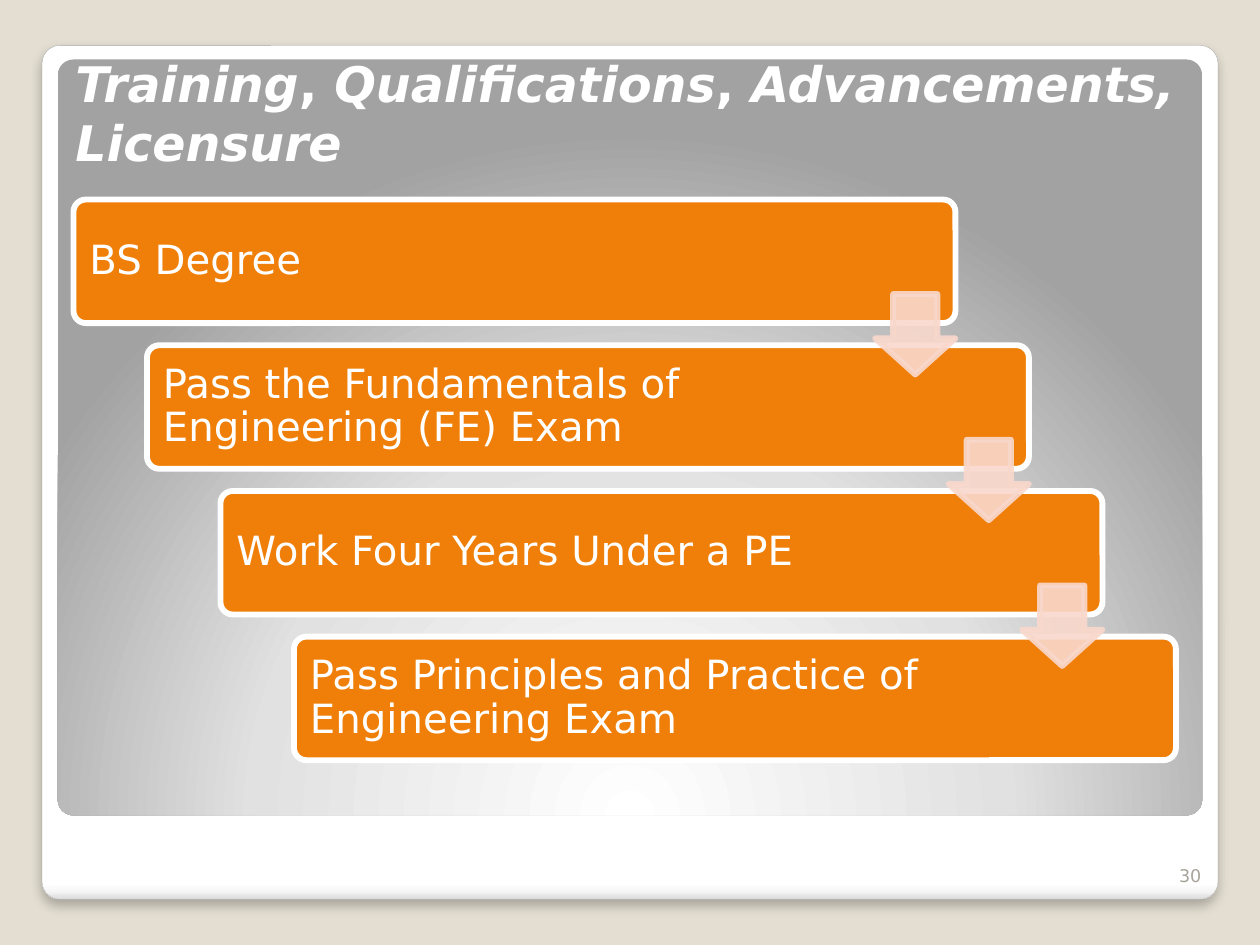
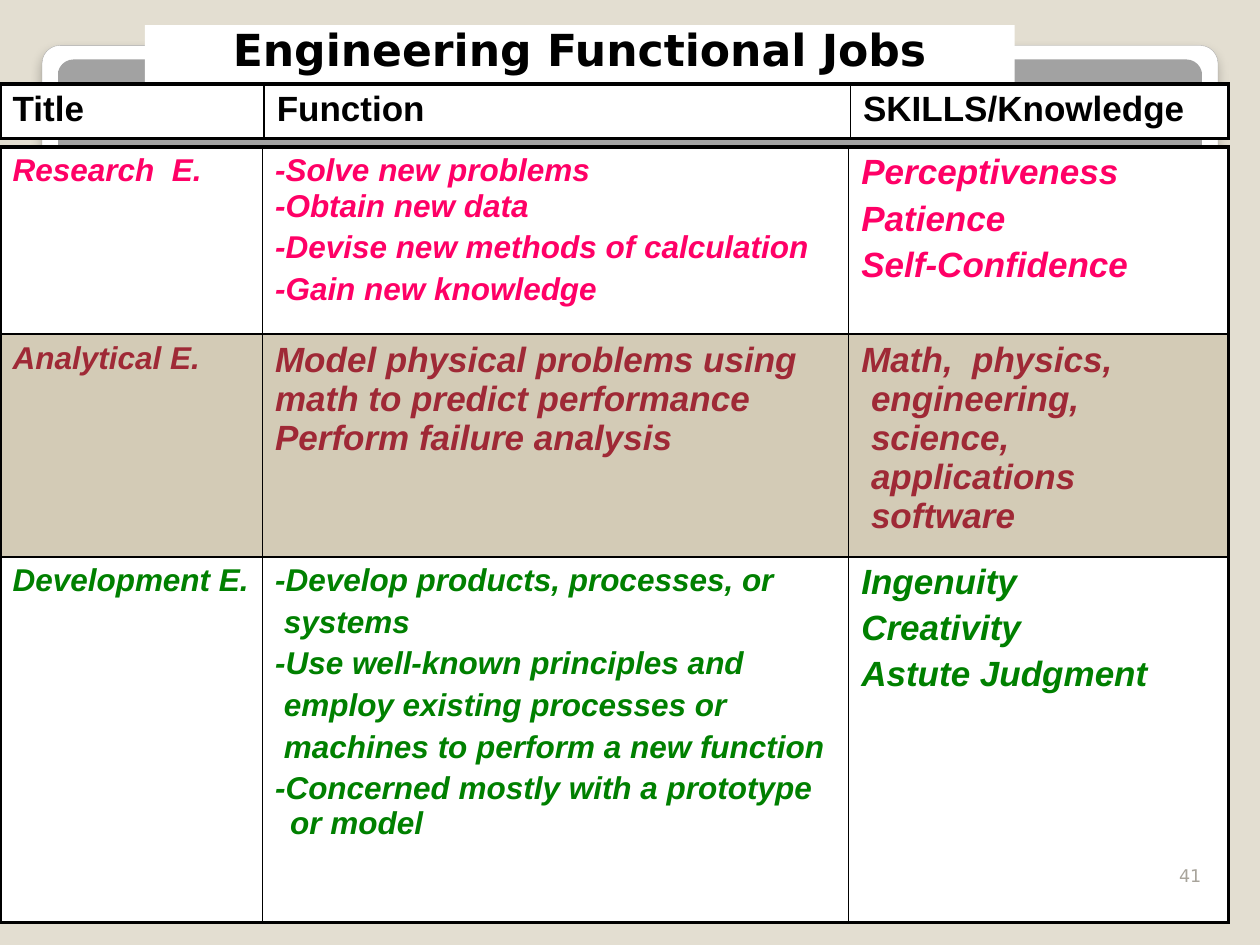
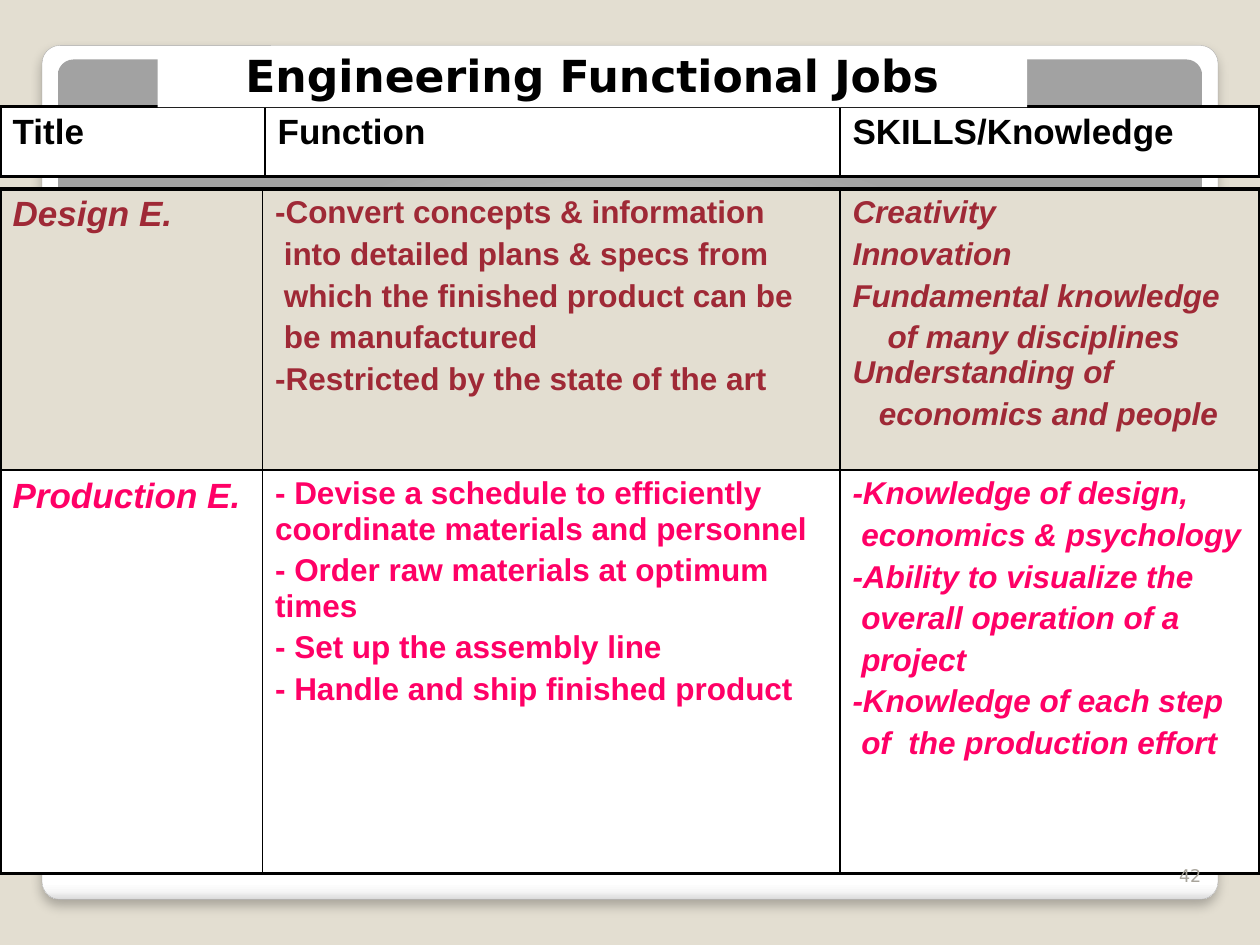
from collections import namedtuple

from lxml.etree import SubElement
from pptx import Presentation
from pptx.dml.color import RGBColor
from pptx.enum.shapes import MSO_SHAPE
from pptx.enum.text import MSO_ANCHOR, PP_ALIGN
from pptx.oxml import parse_xml
from pptx.oxml.ns import nsdecls, qn
from pptx.util import Pt

COLORS = {
    "background": "E3DED1", "white": "FFFFFF", "black": "000000",
    "frame": "A4A4A4", "number": "A8A49B", "step": "F07F09", "arrow": "F9D8CC",
    "pink": "FF0066", "maroon": "9F2936", "green": "008000", "tan": "D3CBB6",
}
TITLE_FONT = "DejaVu Sans"
TABLE_FONT = "Arial"
FRAME_STOPS = [(0, "FFFFFF"), (98, "FFFFFF"), (99, "F7F7F7"), (100, "DADADA")]
FRAME_SHADE = '<a:lin ang="5400000" scaled="0"/>'
PANEL_STOPS = [(0, "FFFFFF"), (55, "E1E1E1"), (100, "A2A2A2")]
PANEL_SHADE = ('<a:path path="circle"><a:fillToRect l="50000" t="175000" '
               'r="50000" b="-75000"/></a:path>')
STEPS = [
    "BS Degree",
    "Pass the Fundamentals of Engineering (FE) Exam",
    "Work Four Years Under a PE",
    "Pass Principles and Practice of Engineering Exam",
]
TITLE_PARTS = ["Training", ", ", "Qualifications", ", ", "Advancements, Licensure"]
HEADINGS = ["Title", "Function", "SKILLS/Knowledge"]

Box = namedtuple("Box", "left top width height")
Line = namedtuple("Line", "text left first", defaults=(0, 0))
Cell = namedtuple("Cell", "size italic lines")
Row = namedtuple("Row", "height fill color cells")

JOBS_RESEARCH = [
    Row(107, "white", "pink", [
        Cell(18, True, [Line("Research  E.")]),
        Cell(18, True, [Line("-Solve new problems\n-Obtain new data"),
                        Line("-Devise new methods of calculation"),
                        Line("-Gain new knowledge")]),
        Cell(20, True, [Line("Perceptiveness"), Line("Patience"),
                        Line("Self-Confidence")]),
    ]),
    Row(122, "tan", "maroon", [
        Cell(18, True, [Line("Analytical E.")]),
        Cell(20, True, [Line("Model physical problems using math to predict "
                             "performance Perform failure analysis")]),
        Cell(20, True, [Line("Math,  physics,\n engineering,\n science,"
                             "\n applications\n software")]),
    ]),
    Row(208.8, "white", "green", [
        Cell(18, True, [Line("Development E.")]),
        Cell(18, True, [Line("-Develop products, processes, or"),
                        Line(" systems"),
                        Line("-Use well-known principles and"),
                        Line(" employ existing processes or"),
                        Line(" machines to perform a new function"),
                        Line("-Concerned mostly with a prototype or model", 8.64, -8.64)]),
        Cell(20, True, [Line("Ingenuity"), Line("Creativity"),
                        Line("Astute Judgment")]),
    ]),
]
JOBS_DESIGN = [
    Row(160.6, "background", "maroon", [
        Cell(20, True, [Line("Design E.")]),
        Cell(18, False, [Line("-Convert concepts & information"),
                         Line(" into detailed plans & specs from"),
                         Line(" which the finished product can be"),
                         Line(" be manufactured"),
                         Line("-Restricted by the state of the art")]),
        Cell(18, True, [Line("Creativity"), Line("Innovation"),
                        Line("Fundamental knowledge"),
                        Line("of many disciplines Understanding of", 0, 20),
                        Line("economics and people", 0, 15)]),
    ]),
    Row(230.4, "white", "pink", [
        Cell(20, True, [Line("Production E.")]),
        Cell(18, False, [Line("- Devise a schedule to efficiently coordinate "
                              "materials and personnel"),
                         Line("- Order raw materials at optimum times"),
                         Line("- Set up the assembly line"),
                         Line("- Handle and ship finished product")]),
        Cell(18, True, [Line("-Knowledge of design,"),
                        Line(" economics & psychology"),
                        Line("-Ability to visualize the"),
                        Line(" overall operation of a"),
                        Line(" project"),
                        Line("-Knowledge of each step"),
                        Line(" of  the production effort")]),
    ]),
]


def rgb(name):
    """Return the named colour."""
    return RGBColor.from_string(COLORS[name])


def lengths(box):
    """Return the four measures of a box as lengths."""
    return [Pt(value) for value in box]


def format_runs(paragraph, font_name, size, color, bold=False, italic=False):
    """Give every run of a paragraph the same font."""
    for run in paragraph.runs:
        run.font.name = font_name
        run.font.size = Pt(size)
        run.font.bold = bold
        run.font.italic = italic
        run.font.color.rgb = rgb(color)


def add_plain_shape(slide, kind, box, fill=None, line=None, line_width=0):
    """Add a shape without shadow, with the given fill and outline."""
    shape = slide.shapes.add_shape(kind, *lengths(box))
    shape.shadow.inherit = False
    if fill:
        shape.fill.solid()
        shape.fill.fore_color.rgb = rgb(fill)
    else:
        shape.fill.background()
    if line:
        shape.line.color.rgb = rgb(line)
        shape.line.width = Pt(line_width)
    else:
        shape.line.fill.background()
    return shape


def add_gradient_panel(slide, box, stops, shade, line=None, line_width=0):
    """Add a slightly rounded panel with a gradient fill."""
    panel = add_plain_shape(slide, MSO_SHAPE.ROUNDED_RECTANGLE, box, None, line, line_width)
    panel.adjustments[0] = 0.021
    stop_xml = "".join(
        f'<a:gs pos="{position * 1000}"><a:srgbClr val="{color}"/></a:gs>'
        for position, color in stops)
    gradient = parse_xml(f'<a:gradFill {nsdecls("a")} rotWithShape="1">'
                         f'<a:gsLst>{stop_xml}</a:gsLst>{shade}</a:gradFill>')
    properties = panel._element.spPr
    properties.replace(properties.find(qn("a:noFill")), gradient)
    return panel


def add_soft_shadow(shape):
    """Cast a soft shadow straight down."""
    effects = shape._element.spPr.find(qn("a:effectLst"))
    shadow = SubElement(effects, qn("a:outerShdw"), blurRad=str(Pt(6)),
                        dist=str(Pt(4)), dir="5400000", rotWithShape="0")
    color = SubElement(shadow, qn("a:srgbClr"), val=COLORS["black"])
    SubElement(color, qn("a:alpha"), val="25000")


def add_framed_slide(presentation):
    """Add a blank slide with the frame and the grey panel."""
    slide = presentation.slides.add_slide(presentation.slide_layouts[6])
    frame = add_gradient_panel(slide, Box(24, 26, 672, 488), FRAME_STOPS,
                               FRAME_SHADE, "frame", 0.16)
    add_soft_shadow(frame)
    add_gradient_panel(slide, Box(33, 34, 654, 432), PANEL_STOPS, PANEL_SHADE)
    return slide


def add_text_box(slide, box):
    """Add a wrapping, bottom-anchored text box and return its text frame."""
    text_frame = slide.shapes.add_textbox(*lengths(box)).text_frame
    text_frame.word_wrap = True
    text_frame.vertical_anchor = MSO_ANCHOR.BOTTOM
    return text_frame


def add_slide_number(slide, number):
    """Write the slide number at the lower right."""
    text_frame = add_text_box(slide, Box(657.5, 481, 36, 29))
    text_frame.text = str(number)
    paragraph = text_frame.paragraphs[0]
    paragraph.alignment = PP_ALIGN.RIGHT
    format_runs(paragraph, TITLE_FONT, 10, "number")


def add_licensure_title(slide, box):
    """Write the white title with upright commas between italic words."""
    paragraph = add_text_box(slide, box).paragraphs[0]
    for part in TITLE_PARTS:
        paragraph.add_run().text = part
    format_runs(paragraph, TITLE_FONT, 28, "white", bold=True)
    for run in paragraph.runs:
        run.font.italic = run.text != ", "


def add_step(slide, box, text):
    """Add one rounded step with its text at the left."""
    step = add_plain_shape(slide, MSO_SHAPE.ROUNDED_RECTANGLE, box, "step", "white", 3.35)
    step.adjustments[0] = 0.1
    text_frame = step.text_frame
    text_frame.word_wrap = True
    text_frame.vertical_anchor = MSO_ANCHOR.MIDDLE
    text_frame.margin_left = Pt(7.2)
    text_frame.margin_right = Pt(95)
    text_frame.text = text
    paragraph = text_frame.paragraphs[0]
    paragraph.alignment = PP_ALIGN.LEFT
    paragraph.line_spacing = 0.9
    format_runs(paragraph, TITLE_FONT, 23, "white")


def add_step_arrow(slide, box):
    """Add a slightly transparent arrow leading to the next step."""
    arrow = add_plain_shape(slide, MSO_SHAPE.DOWN_ARROW, box, "arrow", "arrow", 3.35)
    arrow.adjustments[0] = 0.55
    arrow.adjustments[1] = 0.45
    for color in arrow._element.spPr.iter(qn("a:srgbClr")):
        SubElement(color, qn("a:alpha"), val="90000")


def add_staircase(slide, box):
    """Place the steps evenly from upper left to lower right in the box."""
    step_width, step_height, arrow_size = 504, 70.6, 46
    gaps = len(STEPS) - 1
    shift = (box.width - step_width) / gaps
    drop = (box.height - step_height) / gaps
    step_boxes = [Box(box.left + index * shift, box.top + index * drop,
                      step_width, step_height) for index in range(len(STEPS))]
    for step_box, text in zip(step_boxes, STEPS):
        add_step(slide, step_box, text)
    for step_box in step_boxes[:-1]:
        add_step_arrow(slide, Box(step_box.left + step_width - arrow_size,
                                  step_box.top + 54, arrow_size, arrow_size))


def set_borders(cell, widths):
    """Draw the black borders of a cell, widths keyed by side."""
    properties = cell._tc.get_or_add_tcPr()
    for side, width in widths.items():
        border = SubElement(properties, qn(f"a:ln{side}"), w=str(Pt(width)))
        fill = SubElement(border, qn("a:solidFill"))
        SubElement(fill, qn("a:srgbClr"), val=COLORS["black"])


def fill_cell(cell, content, color):
    """Write the lines of a cell, one paragraph each."""
    text_frame = cell.text_frame
    for index, line in enumerate(content.lines):
        paragraph = text_frame.add_paragraph() if index else text_frame.paragraphs[0]
        paragraph.text = line.text
        if index:
            paragraph.space_before = Pt(content.size * 0.2)
        properties = paragraph._p.get_or_add_pPr()
        properties.set("marL", str(Pt(line.left)))
        properties.set("indent", str(Pt(line.first)))
        format_runs(paragraph, TABLE_FONT, content.size, color, True, content.italic)


def add_job_table(slide, top, column_widths, rows):
    """Add a table with thick outer and thin inner borders."""
    box = Box(0, top, sum(column_widths), sum(row.height for row in rows))
    table = slide.shapes.add_table(len(rows), len(column_widths), *lengths(box)).table
    table.first_row = False
    table.horz_banding = False
    for column, width in zip(table.columns, column_widths):
        column.width = Pt(width)
    last_row, last_column = len(rows) - 1, len(column_widths) - 1
    for row_index, row in enumerate(rows):
        table.rows[row_index].height = Pt(row.height)
        for column_index, content in enumerate(row.cells):
            cell = table.cell(row_index, column_index)
            outer = {"L": column_index == 0, "R": column_index == last_column,
                     "T": row_index == 0, "B": row_index == last_row}
            set_borders(cell, {side: 2.25 if edge else 1 for side, edge in outer.items()})
            cell.fill.solid()
            cell.fill.fore_color.rgb = rgb(row.fill)
            fill_cell(cell, content, row.color)


def add_jobs_title(slide, box):
    """Add the black title on its white band."""
    band = add_plain_shape(slide, MSO_SHAPE.RECTANGLE, box, "white")
    text_frame = band.text_frame
    text_frame.word_wrap = True
    text_frame.vertical_anchor = MSO_ANCHOR.BOTTOM
    text_frame.text = "Engineering Functional Jobs"
    paragraph = text_frame.paragraphs[0]
    paragraph.alignment = PP_ALIGN.CENTER
    format_runs(paragraph, TITLE_FONT, 25.2, "black", bold=True)


def build_licensure_slide(presentation, number):
    """Build the slide with the steps to a licence."""
    slide = add_framed_slide(presentation)
    add_licensure_title(slide, Box(36, 24, 672, 77.5))
    add_slide_number(slide, number)
    add_staircase(slide, Box(42, 114, 630, 320.4))


def build_jobs_slide(presentation, number, title_box, header_top, header_height,
                     header_widths, body_top, body_widths, rows):
    """Build a slide with the heading row above a table of jobs."""
    slide = add_framed_slide(presentation)
    headings = [Cell(20, False, [Line(heading)]) for heading in HEADINGS]
    add_job_table(slide, body_top, body_widths, rows)
    add_job_table(slide, header_top, header_widths,
                  [Row(header_height, "white", "black", headings)])
    add_slide_number(slide, number)
    add_jobs_title(slide, title_box)


def main():
    """Build and save the presentation."""
    presentation = Presentation()
    presentation.slide_width, presentation.slide_height = Pt(720), Pt(540)
    background = presentation.slide_master.background.fill
    background.solid()
    background.fore_color.rgb = rgb("background")
    build_licensure_slide(presentation, 30)
    build_jobs_slide(presentation, 41, Box(82.8, 14.4, 497, 32.4), 48, 30,
                     [151, 335, 216], 84, [150, 335, 217], JOBS_RESEARCH)
    build_jobs_slide(presentation, 42, Box(90, 28.8, 497, 32.4), 61, 40,
                     [151.5, 328.5, 240], 108, [150, 330, 240], JOBS_DESIGN)
    presentation.save("out.pptx")


if __name__ == "__main__":
    main()
